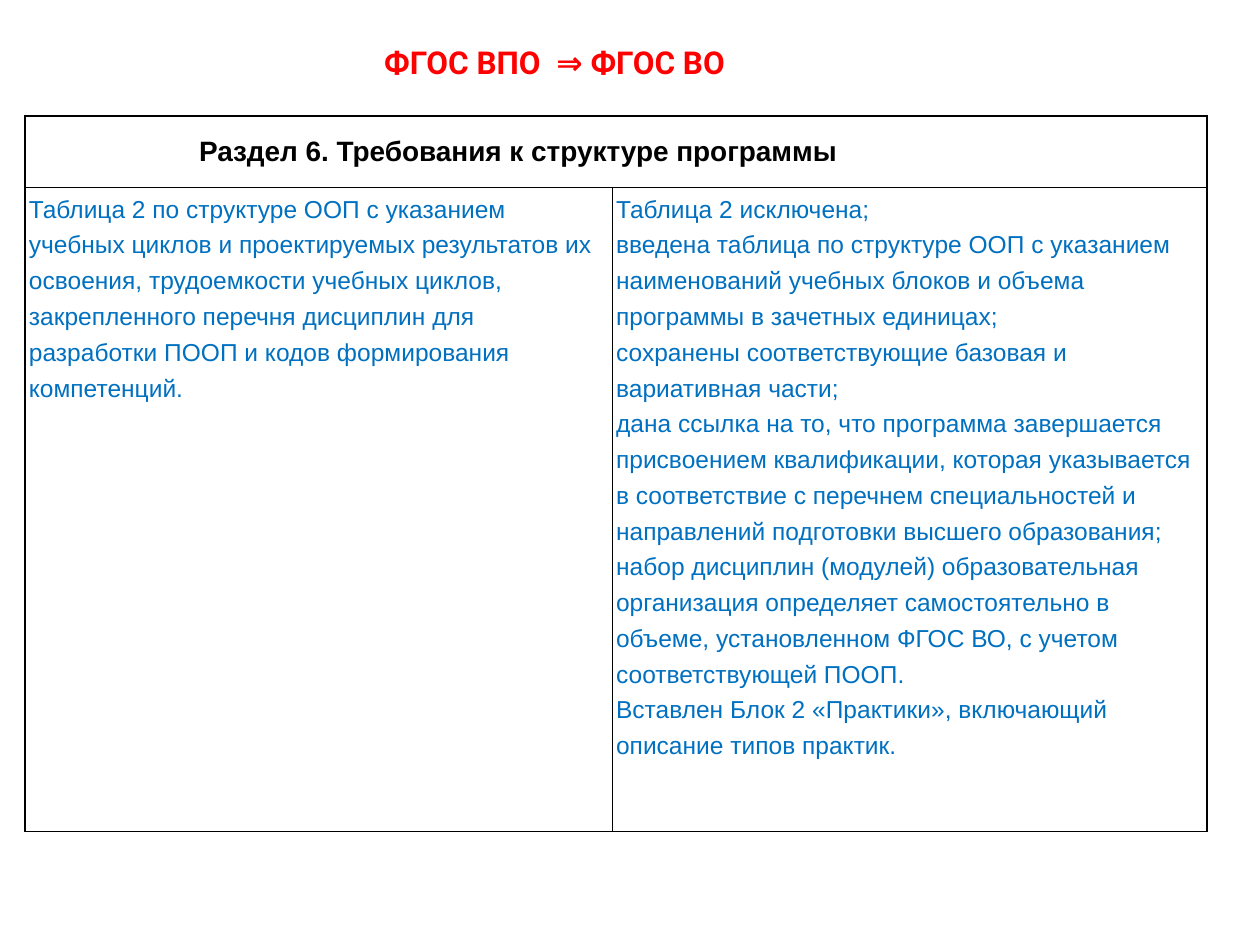
"""Build a slide comparing the programme structure requirements of two standards."""
from lxml.etree import SubElement
from pptx import Presentation
from pptx.dml.color import RGBColor
from pptx.enum.text import MSO_ANCHOR, MSO_AUTO_SIZE
from pptx.oxml.ns import qn
from pptx.util import Inches, Pt

RED = RGBColor(0xFF, 0x00, 0x00)
BLUE = RGBColor(0x00, 0x70, 0xC0)
BLACK = RGBColor(0x00, 0x00, 0x00)
WHITE = RGBColor(0xFF, 0xFF, 0xFF)

HEADING = "Раздел 6. Требования к структуре программы"
OLD_STANDARD = [
    "Таблица 2 по структуре ООП с указанием учебных циклов и проектируемых "
    "результатов их освоения, трудоемкости учебных циклов, закрепленного перечня "
    "дисциплин для разработки ПООП и кодов формирования компетенций.",
]
NEW_STANDARD = [
    "Таблица 2 исключена;",
    "введена таблица по структуре ООП с указанием наименований учебных блоков "
    "и объема программы в зачетных единицах;",
    "сохранены соответствующие базовая и вариативная части;",
    "дана ссылка на то, что программа завершается присвоением квалификации, "
    "которая указывается в соответствие с перечнем специальностей и направлений "
    "подготовки высшего образования;",
    "набор дисциплин (модулей) образовательная организация определяет "
    "самостоятельно в объеме, установленном ФГОС ВО, с учетом соответствующей ПООП.",
    "Вставлен Блок 2 «Практики», включающий описание типов практик.",
]


def format_text(text_frame, font_name, size, color, bold):
    for paragraph in text_frame.paragraphs:
        for run in paragraph.runs:
            run.font.name = font_name
            run.font.size = Pt(size)
            run.font.color.rgb = color
            run.font.bold = bold


def add_borders(cell):
    properties = cell._tc.get_or_add_tcPr()
    for side in ("lnL", "lnR", "lnT", "lnB"):
        line = SubElement(properties, qn(f"a:{side}"), w=str(Pt(1)))
        fill = SubElement(line, qn("a:solidFill"))
        SubElement(fill, qn("a:srgbClr"), val=str(BLACK))


presentation = Presentation()
presentation.slide_width = Inches(10)
presentation.slide_height = Inches(7.5)
slide = presentation.slides.add_slide(presentation.slide_layouts[6])

table = slide.shapes.add_table(
    2, 2, Inches(0.2), Inches(0.92), Inches(9.38), Inches(5.68)
).table
table.first_row = False
table.horz_banding = False
for column, width in zip(table.columns, (4.66, 4.72)):
    column.width = Inches(width)
for row, height in zip(table.rows, (0.57, 5.11)):
    row.height = Inches(height)

for cell in table.iter_cells():
    cell.margin_left = cell.margin_right = Inches(0.03)
    cell.margin_top = cell.margin_bottom = 0
    add_borders(cell)
    cell.fill.solid()
    cell.fill.fore_color.rgb = WHITE

heading_cell = table.cell(0, 0)
heading_cell.merge(table.cell(0, 1))
heading_cell.margin_left = Inches(1.38)
heading_cell.vertical_anchor = MSO_ANCHOR.MIDDLE
heading_cell.text_frame.text = HEADING
format_text(heading_cell.text_frame, "Arial", 16, BLACK, True)

for column_index, statements in enumerate((OLD_STANDARD, NEW_STANDARD)):
    text_frame = table.cell(1, column_index).text_frame
    text_frame.text = "\n".join(statements)
    for paragraph in text_frame.paragraphs:
        paragraph.line_spacing = 1.3
    format_text(text_frame, "Arial", 14, BLUE, False)

title = slide.shapes.add_textbox(Inches(2.95), Inches(0.29), Inches(3.27), Inches(0.4))
title.text_frame.word_wrap = False
title.text_frame.auto_size = MSO_AUTO_SIZE.SHAPE_TO_FIT_TEXT
title.text_frame.text = "ФГОС ВПО  ⇒ ФГОС ВО"
format_text(title.text_frame, "Roboto", 18, RED, True)

presentation.save("out.pptx")
